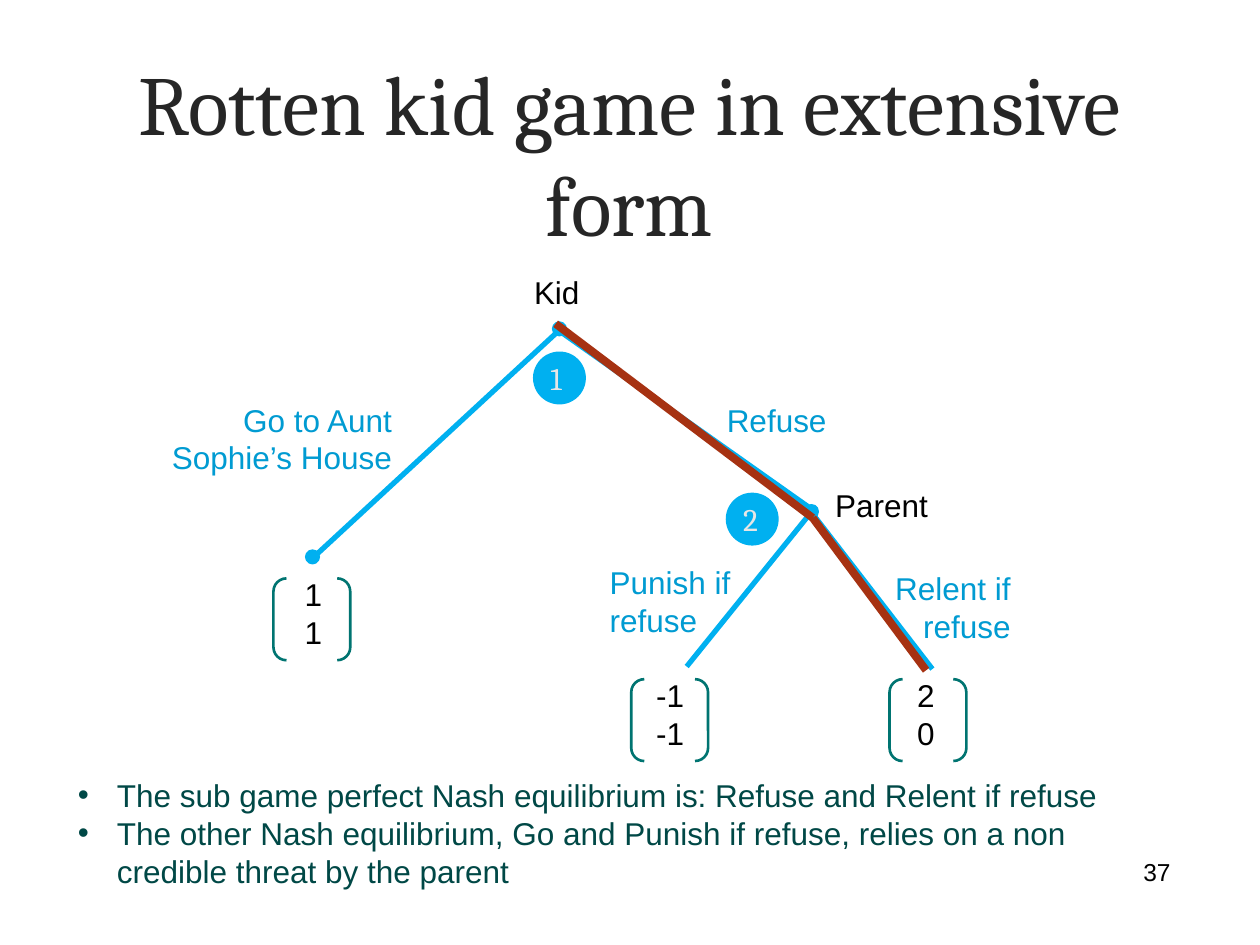
from dataclasses import dataclass

from lxml.etree import SubElement
from pptx import Presentation
from pptx.dml.color import RGBColor
from pptx.enum.shapes import MSO_CONNECTOR, MSO_SHAPE as SHAPE
from pptx.enum.text import MSO_ANCHOR as ANCHOR, MSO_AUTO_SIZE as FIT, PP_ALIGN as ALIGN
from pptx.oxml.ns import qn
from pptx.util import Inches, Pt


@dataclass(frozen=True)
class Theme:
    sans: str = "Arial"
    serif: str = "Cambria"
    title: str = "262626"
    ink: str = "000000"
    notes: str = "004846"
    tree: str = "00B0F0"
    action: str = "009BD2"
    badge: str = "E6E6E6"
    bracket: str = "007471"
    solution: str = "A63212"
    title_size: int = 48
    body_size: int = 18
    number_size: int = 14


THEME = Theme()
COLUMNS, ROWS = 100, 75


class GameSlide:
    """Places elements on a grid of 100 columns by 75 rows."""

    def __init__(self, deck, theme):
        self.theme = theme
        self.slide = deck.slides.add_slide(deck.slide_layouts[5])
        self.shapes = self.slide.shapes
        self.column = deck.slide_width / COLUMNS
        self.row = deck.slide_height / ROWS

    def grid(self, *lengths):
        """Turns alternating columns and rows into slide lengths."""
        return [round(n * (self.row if i % 2 else self.column))
                for i, n in enumerate(lengths)]

    def style(self, paragraph, color, size, font, align):
        paragraph.alignment = align
        values = {"name": font, "size": Pt(size)}
        for attribute, value in values.items():
            setattr(paragraph.font, attribute, value)
        paragraph.font.color.rgb = RGBColor.from_string(color)

    def title(self, words, *box):
        heading = self.shapes.title
        places = zip(("left", "top", "width", "height"), self.grid(*box))
        for attribute, value in places:
            setattr(heading, attribute, value)
        frame = heading.text_frame
        frame.text = words
        frame.vertical_anchor = ANCHOR.MIDDLE
        frame.auto_size = FIT.NONE
        self.style(frame.paragraphs[0], self.theme.title, self.theme.title_size,
                   self.theme.serif, ALIGN.CENTER)

    def text(self, lines, *box, color=None, size=None, font=None, align=ALIGN.LEFT,
             wrap=False, anchor=ANCHOR.TOP, bullet=None):
        frame = self.shapes.add_textbox(*self.grid(*box)).text_frame
        values = {"word_wrap": wrap, "vertical_anchor": anchor, "auto_size": FIT.NONE}
        for attribute, value in values.items():
            setattr(frame, attribute, value)
        for i, line in enumerate(lines):
            paragraph = frame.add_paragraph() if i else frame.paragraphs[0]
            paragraph.text = line
            if bullet:
                self.bullet(paragraph, bullet)
            self.style(paragraph, color or self.theme.ink, size or self.theme.body_size,
                       font or self.theme.sans, align)

    def bullet(self, paragraph, mark):
        properties = paragraph._p.get_or_add_pPr()
        indent = Inches(0.31)
        properties.set("marL", str(indent))
        properties.set("indent", str(-indent))
        SubElement(properties, qn("a:buFont")).set("typeface", self.theme.sans)
        SubElement(properties, qn("a:buChar")).set("char", mark)

    def circle(self, x, y, diameter):
        """Draws a filled circle around its centre."""
        corner = x - diameter / 2, y - diameter / 2
        circle = self.shapes.add_shape(SHAPE.OVAL, *self.grid(*corner, diameter, diameter))
        circle.shadow.inherit = False
        color = RGBColor.from_string(self.theme.tree)
        circle.fill.solid()
        circle.fill.fore_color.rgb = color
        circle.line.color.rgb = color
        circle.line.width = Pt(0.75)

    def badge(self, number, x, y):
        self.circle(x, y, 4.1)
        self.text([number], x - 1.7, y - 2, 3.4, 4,
                  color=self.theme.badge, font=self.theme.serif)

    def branch(self, start, end, color, width):
        line = self.shapes.add_connector(MSO_CONNECTOR.STRAIGHT, *self.grid(*start, *end))
        line.line.color.rgb = RGBColor.from_string(color)
        line.line.width = Pt(width)
        SubElement(line._element.spPr, qn("a:effectLst"))

    def payoff(self, values, x, y, text_x, text_width):
        pair = self.shapes.add_shape(SHAPE.DOUBLE_BRACKET, *self.grid(x, y, 6.1, 6.5))
        pair.adjustments[0] = 0.17
        pair.shadow.inherit = False
        pair.fill.background()
        pair.line.color.rgb = RGBColor.from_string(self.theme.bracket)
        pair.line.width = Pt(1.5)
        self.text(values, text_x, y - 0.75, text_width, 7.7)


def main():
    deck = Presentation()
    deck.slide_width, deck.slide_height = Inches(10), Inches(7.5)
    game = GameSlide(deck, THEME)

    # Title, page number and conclusions
    game.title("Rotten kid game in extensive form", 6, 4.2, 87.9, 15.8)
    game.text(["37"], 70.6, 67.2, 23.3, 4, size=THEME.number_size,
              align=ALIGN.RIGHT, wrap=True, anchor=ANCHOR.MIDDLE)
    game.text(["The sub game perfect Nash equilibrium is: Refuse and Relent if refuse",
               "The other Nash equilibrium, Go and Punish if refuse, relies on a non "
               "credible threat by the parent"],
              5.2, 61.1, 88.7, 10.1, color=THEME.notes, wrap=True, bullet="•")

    # Decision nodes and players
    for node in ((44.4, 26.1), (24.8, 44.2), (64.4, 40.6)):
        game.circle(*node, 1.1)
    game.text(["Kid"], 41.4, 21.2, 5.7, 4)
    game.text(["Parent"], 65.3, 38.1, 9.5, 4)

    # Branches with their actions
    branches = [
        ((44.3, 26.2), (64.4, 40.4), "Refuse", (56.7, 31.3, 10, 4), ALIGN.LEFT),
        ((44.4, 26.2), (24.7, 44.4), "Go to Aunt Sophie’s House",
         (12.5, 31.3, 19.6, 7.1), ALIGN.RIGHT),
        ((64.2, 40.4), (74, 53.1), "Relent if refuse", (65.8, 44.7, 15.4, 7.1), ALIGN.RIGHT),
        ((64.5, 40.5), (54.5, 52.9), "Punish if refuse", (47.4, 44.2, 15.1, 7.1), ALIGN.LEFT),
    ]
    for start, end, action, box, align in branches:
        game.branch(start, end, THEME.tree, 3)
        game.text([action], *box, color=THEME.action, align=align, wrap=action != "Refuse")

    # Payoffs at the end of each branch
    game.payoff(["-1", "-1"], 50.1, 53.9, 51.1, 4.3)
    game.payoff(["2", "0"], 70.6, 53.9, 71.8, 3.4)
    game.payoff(["1", "1"], 21.7, 45.9, 23.2, 3.4)

    # Order of moves
    game.badge("1", 44.4, 30)
    game.badge("2", 59.7, 41.2)

    # Subgame perfect path
    relent, parent, kid = (73.5, 53.2), (64.5, 41.1), (44.1, 25.7)
    for start, end in ((relent, parent), (parent, kid)):
        game.branch(start, end, THEME.solution, 4.5)

    deck.save("out.pptx")


if __name__ == "__main__":
    main()
